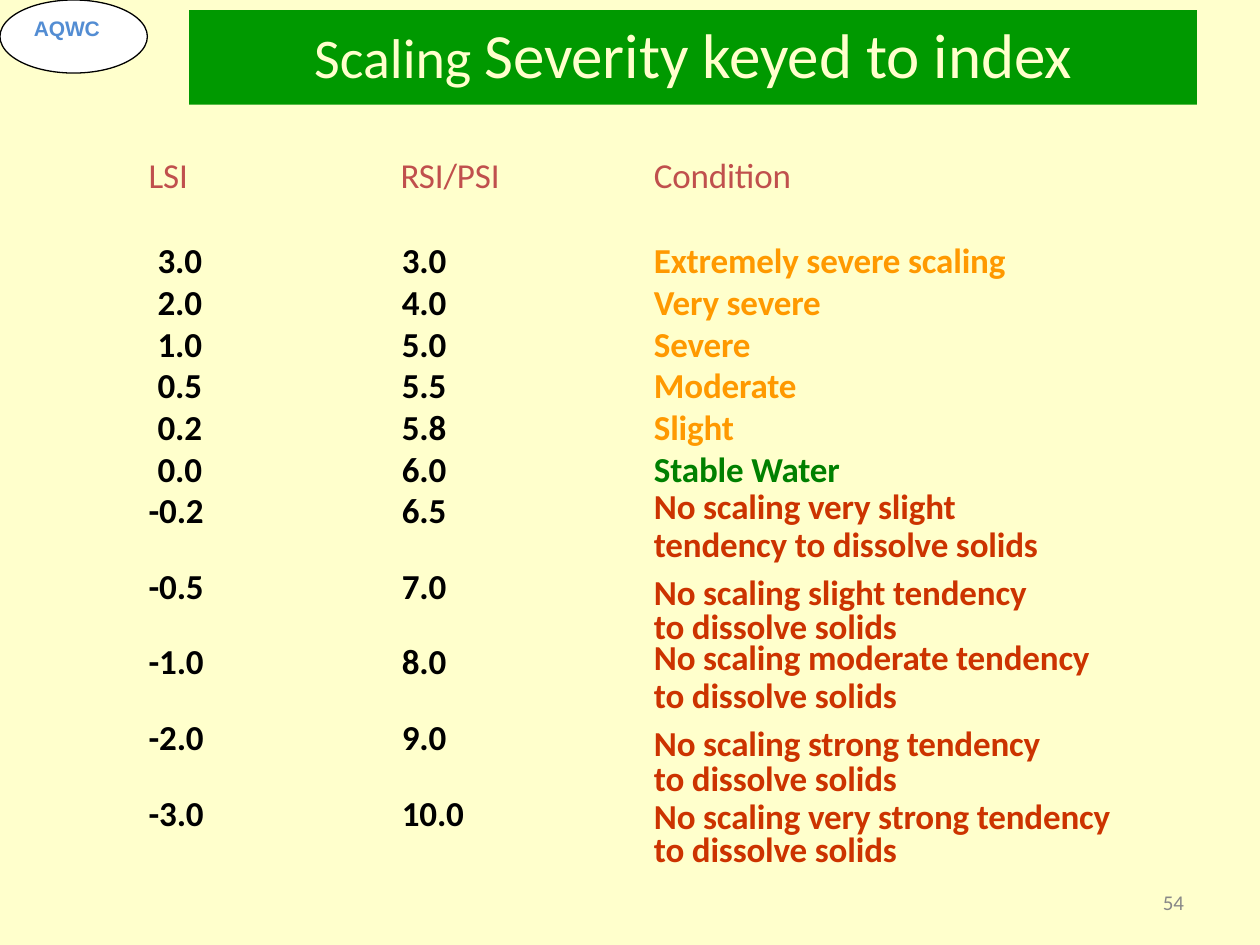
from lxml.etree import SubElement
from pptx import Presentation
from pptx.dml.color import RGBColor
from pptx.enum.shapes import MSO_SHAPE
from pptx.enum.text import MSO_ANCHOR, MSO_AUTO_SIZE, PP_ALIGN
from pptx.oxml.ns import qn
from pptx.util import Inches, Pt

CREAM = RGBColor(0xFF, 0xFF, 0xCC)
WHITE = RGBColor(0xFF, 0xFF, 0xFF)
BLACK = RGBColor(0x00, 0x00, 0x00)
BANNER_GREEN = RGBColor(0x00, 0x99, 0x00)
BADGE_BLUE = RGBColor(0x53, 0x8D, 0xD3)
GRAY = RGBColor(0x88, 0x88, 0x88)
HEADING_RED = RGBColor(0xC0, 0x50, 0x4D)
ORANGE = RGBColor(0xFF, 0x99, 0x00)
GREEN = RGBColor(0x00, 0x80, 0x00)
RED = RGBColor(0xCC, 0x33, 0x00)
NO_GRID_STYLE = "{2D5ABB26-0587-4C30-8999-92F81FD0307C}"


def add_span(para, text, size, color, bold=False, name="Calibri", tracking=-10):
    span = para.add_run()
    span.text = text
    for attribute, value in {"size": Pt(size), "bold": bold, "name": name}.items():
        setattr(span.font, attribute, value)
    span.font.color.rgb = color
    span.font._element.set("spc", str(tracking))


def set_margins(target, top=0, right=0):
    margins = {"margin_left": 0, "margin_top": top, "margin_right": right, "margin_bottom": 0}
    for attribute, value in margins.items():
        setattr(target, attribute, Inches(value))


deck = Presentation()
deck.slide_width = Inches(10)
deck.slide_height = Inches(7.5)
page = deck.slides.add_slide(deck.slide_layouts[5])
page.background.fill.solid()
page.background.fill.fore_color.rgb = CREAM

badge = page.shapes.add_shape(MSO_SHAPE.OVAL, 0, 0, Inches(1.17), Inches(0.58))
badge.shadow.inherit = False
badge.fill.solid()
badge.fill.fore_color.rgb = WHITE
badge.line.color.rgb = BLACK
badge.line.width = Pt(0.75)

title = page.shapes.title
title.left, title.top = Inches(1.5), Inches(0.08)
title.width, title.height = Inches(8), Inches(0.75)
title.fill.solid()
title.fill.fore_color.rgb = BANNER_GREEN
title.text_frame.auto_size = MSO_AUTO_SIZE.NONE
title.text_frame.vertical_anchor = MSO_ANCHOR.TOP
set_margins(title.text_frame, top=0.04)
title_para = title.text_frame.paragraphs[0]
title_para.alignment = PP_ALIGN.CENTER
add_span(title_para, "Scaling ", 32, CREAM, tracking=0)
add_span(title_para, "Severity keyed to index", 36, CREAM, tracking=-5)

labels = [
    ("AQWC", 0.27, 0.12, 0.6, 0.23, 12, BADGE_BLUE, True, "Arial"),
    ("54", 9.23, 7.06, 0.2, 0.2, 12, GRAY, False, "Calibri"),
    ("LSI", 1.18, 1.22, 0.34, 0.36, 20, HEADING_RED, False, "Calibri"),
    ("RSI/PSI\tCondition", 3.18, 1.22, 3.13, 0.36, 20, HEADING_RED, False, "Calibri"),
]
for text, left, top, width, height, size, color, bold, font_name in labels:
    box = page.shapes.add_textbox(Inches(left), Inches(top), Inches(width), Inches(height))
    box.text_frame.word_wrap = True
    set_margins(box.text_frame)
    para = box.text_frame.paragraphs[0]
    if "\t" in text:
        tab_list = SubElement(para._p.get_or_add_pPr(), qn("a:tabLst"))
        SubElement(tab_list, qn("a:tab"), pos=str(Inches(2.01)), algn="l")
    add_span(para, text, size, color, bold, font_name)

severities = [
    ("3.0", "3.0", ["Extremely severe scaling"], ORANGE),
    ("2.0", "4.0", ["Very severe"], ORANGE),
    ("1.0", "5.0", ["Severe"], ORANGE),
    ("0.5", "5.5", ["Moderate"], ORANGE),
    ("0.2", "5.8", ["Slight"], ORANGE),
    ("0.0", "6.0", ["Stable Water"], GREEN),
    ("-0.2", "6.5", ["No scaling very slight", "tendency to dissolve solids"], RED),
    ("-0.5", "7.0", ["No scaling slight tendency to dissolve solids"], RED),
    ("-1.0", "8.0", ["No scaling moderate tendency", "to dissolve solids"], RED),
    ("-2.0", "9.0", ["No scaling strong tendency to dissolve solids"], RED),
    ("-3.0", "10.0", ["No scaling very strong tendency to dissolve solids"], RED),
]
row_heights = [0.31] + [0.33] * 5 + [0.6] * 4 + [0.57]
column_widths = [1.26, 2.03, 4.45]
frame = page.shapes.add_table(len(severities), 3, Inches(1.15), Inches(1.98),
                              Inches(sum(column_widths)), Inches(sum(row_heights)))
table = frame.table
table.first_row = table.horz_banding = False
table._tbl.tblPr.find(qn("a:tableStyleId")).text = NO_GRID_STYLE
for column, width in zip(table.columns, column_widths):
    column.width = Inches(width)

for index, (lsi, rsi, condition, color) in enumerate(severities):
    table.rows[index].height = Inches(row_heights[index])
    lsi_indent = 0.03 if lsi.startswith("-") else 0.1
    columns = [([lsi], lsi_indent, BLACK), ([rsi], 0.78, BLACK), (condition, 0.75, color)]
    for position, (lines, indent, text_color) in enumerate(columns):
        cell = table.cell(index, position)
        cell.fill.background()
        wrapped = len(lines[0]) > 40
        last = index == len(severities) - 1
        set_margins(cell, top=0.05 if wrapped else 0, right=0.5 if wrapped and not last else 0)
        for number, line in enumerate(lines):
            para = cell.text_frame.add_paragraph() if number else cell.text_frame.paragraphs[0]
            para._p.get_or_add_pPr().set("marL", str(Inches(indent)))
            if wrapped:
                para.line_spacing = Pt(19.2) if last else 0.8
            elif len(lines) == 2:
                para.line_spacing = Pt(21.6 if number else 18.6)
            else:
                para.line_spacing = Pt(21 if index else 19.1)
            add_span(para, line, 20, text_color, True)

deck.save("out.pptx")
